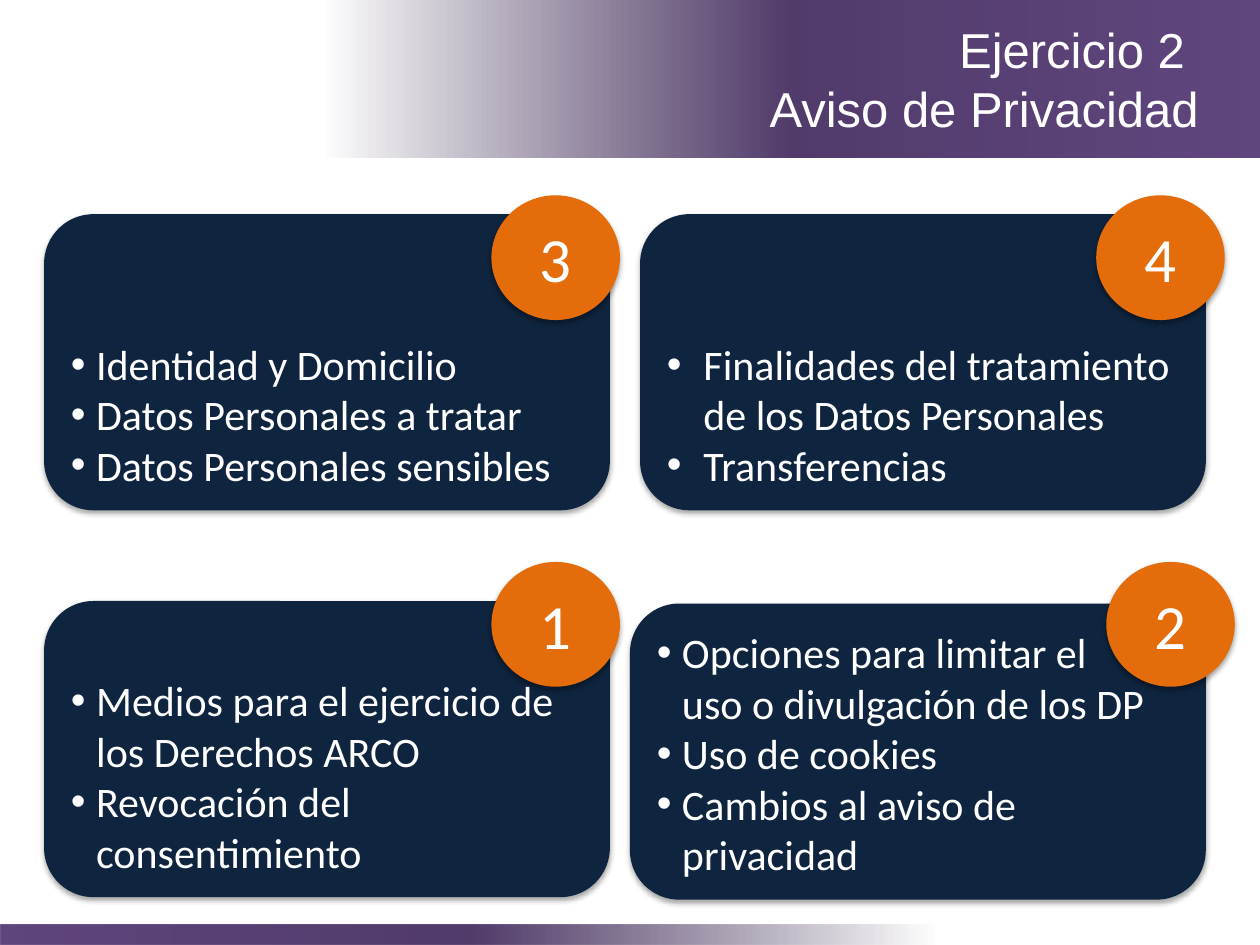
from dataclasses import dataclass

from lxml.etree import SubElement
from pptx import Presentation
from pptx.dml.color import RGBColor
from pptx.enum.shapes import MSO_SHAPE as Preset
from pptx.enum.text import MSO_ANCHOR as Anchor, PP_ALIGN as Align
from pptx.oxml.ns import qn
from pptx.util import Inches, Pt

COLUMNS, ROWS = 100, 75
SLIDE_WIDTH, SLIDE_HEIGHT = Inches(10), Inches(7.5)


@dataclass(frozen=True)
class Theme:
    white: str = "FFFFFF"
    card: str = "0F243E"
    badge: str = "E46C0A"
    shadow: str = "000000"
    band: tuple = ("39294B", "513B6B", "60467E")
    title_font: str = "Arial"
    body_font: str = "Calibri"
    title_size: int = 28
    body_size: int = 24
    badge_size: int = 36


THEME = Theme()
CARD_WIDTH, CARD_HEIGHT = 44.9, 23.5
BADGE_WIDTH, BADGE_HEIGHT = 10.2, 9.9

# number, card (left, top, width), badge (left, top), bullet indent in inches, items
CARDS = [
    ("3", (3.5, 17, CARD_WIDTH), (39, 15.5), 0.2,
     ["Identidad y Domicilio", "Datos Personales a tratar", "Datos Personales sensibles"]),
    ("4", (50.8, 17, CARD_WIDTH), (87, 15.5), 0.29,
     ["Finalidades del tratamiento de los Datos Personales", "Transferencias"]),
    ("1", (3.5, 47.7, CARD_WIDTH), (39, 44.6), 0.2,
     ["Medios para el ejercicio de los Derechos ARCO", "Revocación del consentimiento"]),
    ("2", (50, 47.9, 45.7), (87.8, 44.6), 0.2,
     ["Opciones para limitar el\vuso o divulgación de los DP", "Uso de cookies",
      "Cambios al aviso de privacidad"]),
]


def apply_format(target, values):
    for name, value in values.items():
        setattr(target, name, value)


def place(left, top, width, height):
    """Turn grid columns and rows into slide lengths."""
    column, row = SLIDE_WIDTH / COLUMNS, SLIDE_HEIGHT / ROWS
    return [round(length) for length in (left * column, top * row, width * column, height * row)]


def add_plain_shape(slide, preset, box, color=None):
    shape = slide.shapes.add_shape(preset, *place(*box))
    shape.shadow.inherit = False
    shape.line.fill.background()
    if color:
        shape.fill.solid()
        shape.fill.fore_color.rgb = RGBColor.from_string(color)
    return shape


def add_soft_shadow(shape):
    effects = shape._element.spPr.find(qn("a:effectLst"))
    shadow = SubElement(effects, qn("a:outerShdw"), blurRad=str(Pt(3.1)), dist=str(Pt(1.8)),
                        dir="5400000", rotWithShape="0")
    color = SubElement(shadow, qn("a:srgbClr"), val=THEME.shadow)
    SubElement(color, qn("a:alpha"), val="35000")


def add_band(slide, box, rotation=0):
    """Add a bar that fades from clear to purple."""
    band = add_plain_shape(slide, Preset.RECTANGLE, box)
    band.rotation = rotation
    band.fill.gradient()
    band.fill.gradient_angle = 0
    stops = band._element.spPr.find(qn("a:gradFill")).find(qn("a:gsLst"))
    for stop in list(stops):
        stops.remove(stop)
    for position, value in zip((0, 50000, 100000), THEME.band):
        stop = SubElement(stops, qn("a:gs"), pos=str(position))
        color = SubElement(stop, qn("a:srgbClr"), val=value)
        if position == 0:
            SubElement(color, qn("a:alpha"), val="0")


def set_bullet(paragraph, indent):
    properties = paragraph._p.get_or_add_pPr()
    properties.set("marL", str(Inches(indent)))
    properties.set("indent", str(-Inches(indent)))
    SubElement(properties, qn("a:buFont"), typeface="Arial")
    SubElement(properties, qn("a:buChar"), char="•")


def write_text(shape, lines, font, size, align, anchor, indent=None):
    frame = shape.text_frame
    apply_format(frame, {"word_wrap": True, "vertical_anchor": anchor})
    for index, line in enumerate(lines):
        paragraph = frame.add_paragraph() if index else frame.paragraphs[0]
        paragraph.text = line
        paragraph.alignment = align
        if indent:
            set_bullet(paragraph, indent)
        for run in paragraph.runs:
            apply_format(run.font, {"name": font, "size": Pt(size)})
            run.font.color.rgb = RGBColor.from_string(THEME.white)


def add_title(slide):
    box = slide.shapes.add_textbox(*place(47.7, 0, 48.4, 12.5))
    write_text(box, ["Ejercicio 2 ", "Aviso de Privacidad"], THEME.title_font,
               THEME.title_size, Align.RIGHT, Anchor.MIDDLE)


def add_card(slide, box, items, indent):
    card = add_plain_shape(slide, Preset.ROUNDED_RECTANGLE, (*box, CARD_HEIGHT), THEME.card)
    add_soft_shadow(card)
    write_text(card, items, THEME.body_font, THEME.body_size, Align.LEFT, Anchor.BOTTOM, indent)


def add_badge(slide, corner, number):
    badge = add_plain_shape(slide, Preset.OVAL, (*corner, BADGE_WIDTH, BADGE_HEIGHT), THEME.badge)
    add_soft_shadow(badge)
    write_text(badge, [number], THEME.body_font, THEME.badge_size, Align.CENTER, Anchor.MIDDLE)


def main():
    presentation = Presentation()
    apply_format(presentation, {"slide_width": SLIDE_WIDTH, "slide_height": SLIDE_HEIGHT})
    slide = presentation.slides.add_slide(presentation.slide_layouts[6])
    add_band(slide, (25.8, 0, 74.2, 12.5))
    add_band(slide, (0, 73.4, 74.2, 1.6), rotation=180)
    add_title(slide)
    for _, box, _, indent, items in CARDS:
        add_card(slide, box, items, indent)
    for number, _, corner, _, _ in CARDS:
        add_badge(slide, corner, number)
    presentation.save("out.pptx")


if __name__ == "__main__":
    main()
